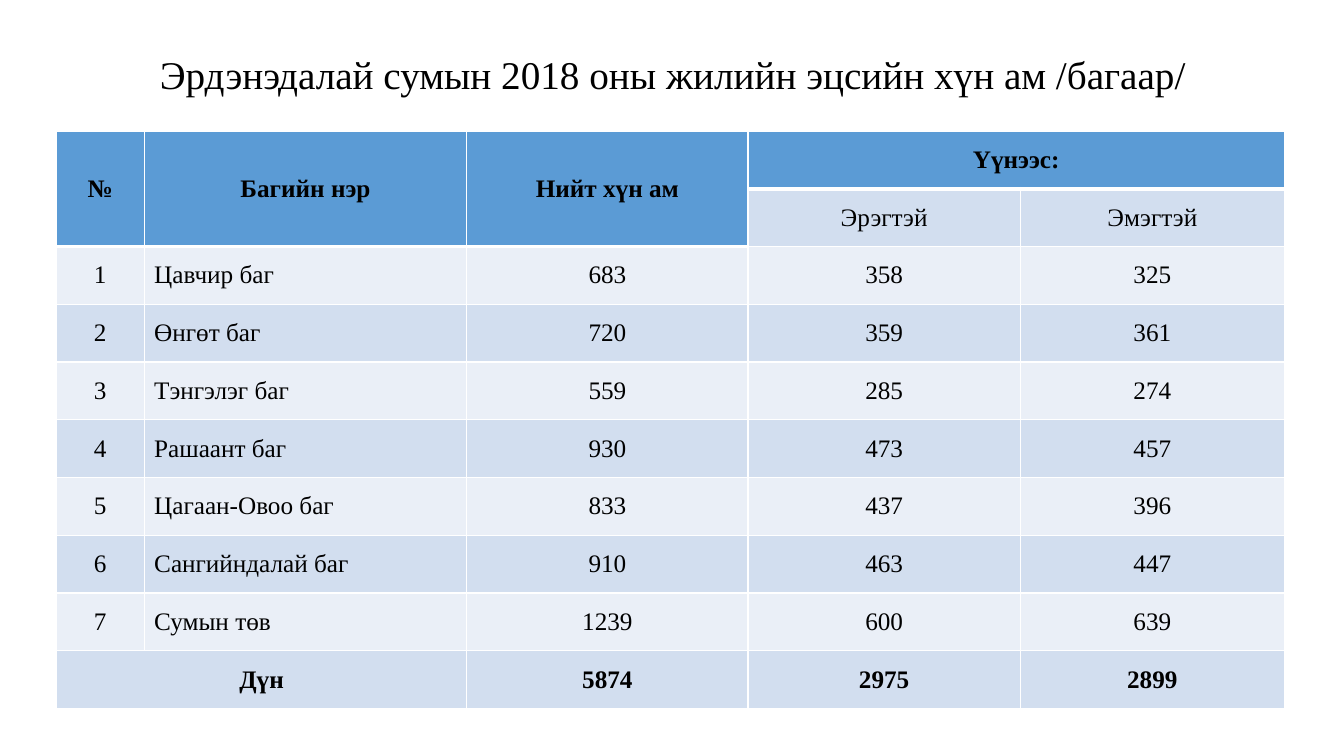
from lxml import etree
from pptx import Presentation
from pptx.dml.color import RGBColor
from pptx.enum.text import MSO_ANCHOR, PP_ALIGN
from pptx.oxml.ns import qn
from pptx.util import Inches, Pt

TITLE = "Эрдэнэдалай сумын 2018 оны жилийн эцсийн хүн ам /багаар/"
# None marks a cell covered by a merged neighbour.
ROWS = [
    ("№", "Багийн нэр", "Нийт хүн ам", "Үүнээс:", None),
    (None, None, None, "Эрэгтэй", "Эмэгтэй"),
    ("1", "Цавчир баг", "683", "358", "325"),
    ("2", "Өнгөт баг", "720", "359", "361"),
    ("3", "Тэнгэлэг баг", "559", "285", "274"),
    ("4", "Рашаант баг", "930", "473", "457"),
    ("5", "Цагаан-Овоо баг", "833", "437", "396"),
    ("6", "Сангийндалай баг", "910", "463", "447"),
    ("7", "Сумын төв", "1239", "600", "639"),
    ("Дүн", None, "5874", "2975", "2899"),
]
TOTAL_ROW = len(ROWS) - 1
MERGES = [((0, 0), (1, 0)), ((0, 1), (1, 1)), ((0, 2), (1, 2)),
          ((0, 3), (0, 4)), ((TOTAL_ROW, 0), (TOTAL_ROW, 1))]
COLUMN_WIDTHS = [0.87, 3.2, 2.79, 2.7, 2.62]
TABLE_LEFT, TABLE_TOP, TABLE_HEIGHT = 0.56, 1.3, 5.73
NAME_COLUMN = 1

FONT = "Times New Roman"
BLACK = RGBColor(0x00, 0x00, 0x00)
WHITE = RGBColor(0xFF, 0xFF, 0xFF)
HEADER_BLUE = RGBColor(0x5B, 0x9B, 0xD5)
BAND_DARK = RGBColor(0xD2, 0xDE, 0xEF)
BAND_LIGHT = RGBColor(0xEA, 0xEF, 0xF7)
LEFT, CENTER = PP_ALIGN.LEFT, PP_ALIGN.CENTER
MIDDLE = MSO_ANCHOR.MIDDLE


def write_text(text_frame, text, size=18, bold=False, align=CENTER, line_spacing=None):
    paragraph = text_frame.paragraphs[0]
    paragraph.alignment = align
    paragraph.line_spacing = line_spacing
    run = paragraph.add_run()
    run.text = text
    run.font.name = FONT
    run.font.size = Pt(size)
    run.font.bold = bold
    run.font.color.rgb = BLACK


def set_borders(cell, top, bottom):
    """Draw white borders; top and bottom are widths in points."""
    properties = cell._tc.get_or_add_tcPr()
    for side, width in (("L", 1), ("R", 1), ("T", top), ("B", bottom)):
        line = etree.SubElement(properties, qn(f"a:ln{side}"), w=str(Pt(width)))
        fill = etree.SubElement(line, qn("a:solidFill"))
        etree.SubElement(fill, qn("a:srgbClr"), val=str(WHITE))


def is_header(row, column):
    return row == 0 or (row == 1 and column < 3)


def add_title(slide):
    title = slide.shapes.add_textbox(Inches(0.92), Inches(0.4), Inches(11.5), Inches(0.73))
    title.text_frame.word_wrap = True
    title.text_frame.vertical_anchor = MIDDLE
    write_text(title.text_frame, TITLE, size=28, line_spacing=0.9)


def add_population_table(slide):
    table = slide.shapes.add_table(
        len(ROWS), len(COLUMN_WIDTHS), Inches(TABLE_LEFT), Inches(TABLE_TOP),
        Inches(sum(COLUMN_WIDTHS)), Inches(TABLE_HEIGHT)).table
    for column, width in zip(table.columns, COLUMN_WIDTHS):
        column.width = Inches(width)
    for start, end in MERGES:
        table.cell(*start).merge(table.cell(*end))

    for row, values in enumerate(ROWS):
        for column, text in enumerate(values):
            cell = table.cell(row, column)
            header = is_header(row, column)
            below_header = row > 0 and not header and is_header(row - 1, column)
            set_borders(cell, top=3 if below_header else 1, bottom=3 if header else 1)
            cell.fill.solid()
            band = BAND_DARK if row % 2 else BAND_LIGHT
            cell.fill.fore_color.rgb = HEADER_BLUE if header else band
            cell.vertical_anchor = MIDDLE
            if text is not None:
                is_name = column == NAME_COLUMN and not header
                write_text(cell.text_frame, text, bold=header or row == TOTAL_ROW,
                           align=LEFT if is_name else CENTER)


def main():
    presentation = Presentation()
    presentation.slide_width = Inches(13.33)
    presentation.slide_height = Inches(7.5)
    slide = presentation.slides.add_slide(presentation.slide_layouts[6])
    add_title(slide)
    add_population_table(slide)
    presentation.save("out.pptx")


if __name__ == "__main__":
    main()
